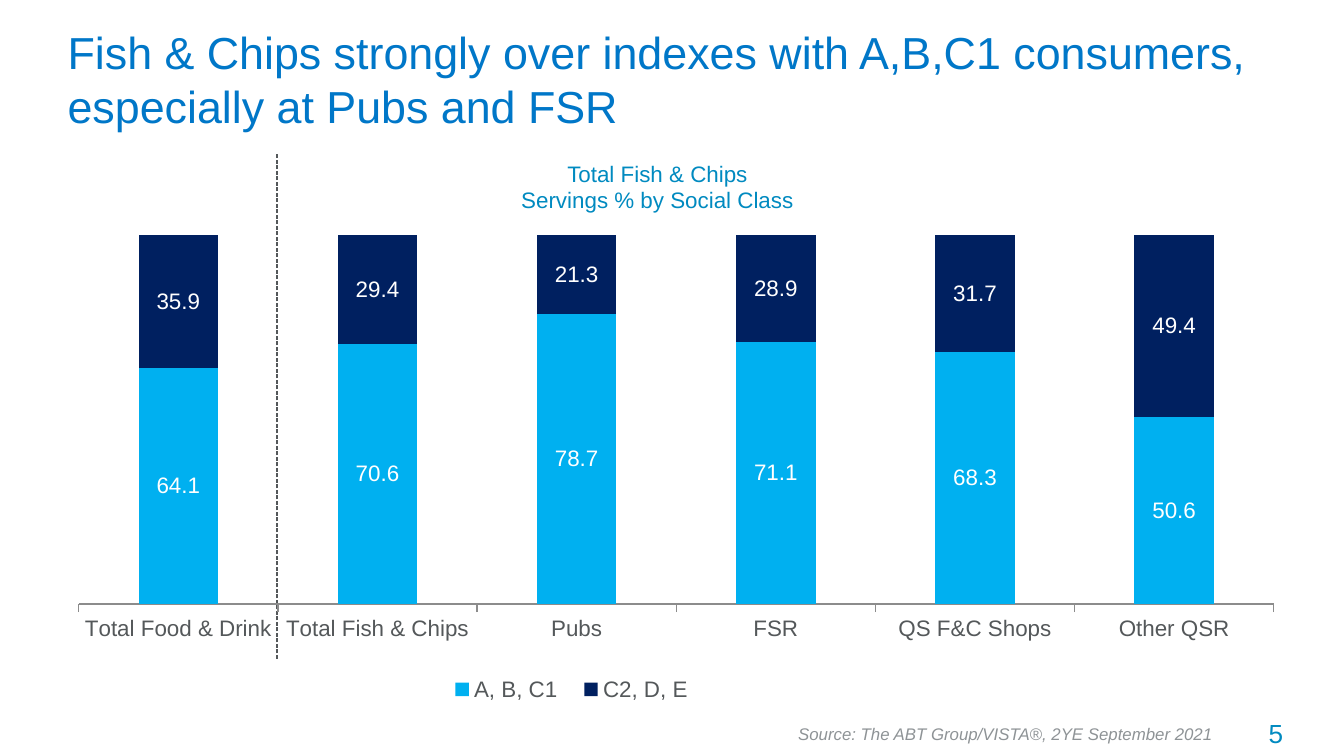
import pptx
import pptx.util
import pptx.chart.data
import pptx.dml.color
import pptx.enum.chart
import pptx.enum.dml
import pptx.enum.shapes
import pptx.enum.text
import pptx.oxml
import pptx.oxml.ns

RGB = pptx.dml.color.RGBColor
TITLE = RGB(0x00, 0x77, 0xC8)
TEAL = RGB(0x00, 0x8A, 0xC0)
GREY = RGB(0x54, 0x58, 0x5A)
PALE = RGB(0x8E, 0x93, 0x96)
AXIS = RGB(0x8C, 0x8C, 0x8C)
SKY = RGB(0x00, 0xB0, 0xF0)
NAVY = RGB(0x00, 0x20, 0x60)
WHITE = RGB(0xFF, 0xFF, 0xFF)
FONT = "Arial"
SCALE = 6350
ALIGN = pptx.enum.text.PP_ALIGN

CATS = ["Total Food & Drink", "Total Fish & Chips", "Pubs", "FSR",
        "QS F&C Shops", "Other QSR"]
SERIES = [
    ("A, B, C1", SKY, [64.1, 70.6, 78.7, 71.1, 68.3, 50.6]),
    ("C2, D, E", NAVY, [35.9, 29.4, 21.3, 28.9, 31.7, 49.4]),
]


def px(*nums):
    """Turn px lengths into EMU."""
    return [pptx.util.Emu(n * SCALE) for n in nums]


def style(font, size, color):
    """Set the face, size and colour of a font."""
    font.name = FONT
    font.size = pptx.util.Pt(size)
    font.color.rgb = color


def write(frame, lines, size, color, align, italic=False):
    """Fill a text frame with one run for each line."""
    for i, line in enumerate(lines):
        para = frame.add_paragraph() if i else frame.paragraphs[0]
        para.alignment = align
        run = para.add_run()
        run.text = line
        style(run.font, size, color)
        run.font.italic = italic


def add_title(slide, box, text):
    """Place and format the title."""
    title = slide.shapes.title
    title.left, title.top, title.width, title.height = px(*box)
    frame = title.text_frame
    frame.word_wrap = True
    frame.auto_size = pptx.enum.text.MSO_AUTO_SIZE.NONE
    frame.vertical_anchor = pptx.enum.text.MSO_ANCHOR.MIDDLE
    write(frame, [text], 24, TITLE, ALIGN.LEFT)


def add_text(slide, box, lines, size, color, align, wrap=False, italic=False):
    """Add a text box."""
    frame = slide.shapes.add_textbox(*px(*box)).text_frame
    frame.word_wrap = wrap
    frame.auto_size = pptx.enum.text.MSO_AUTO_SIZE.SHAPE_TO_FIT_TEXT
    write(frame, lines, size, color, align, italic)


def add_rule(slide, x, top, end):
    """Add the dashed upright divider."""
    kind = pptx.enum.shapes.MSO_CONNECTOR.STRAIGHT
    rule = slide.shapes.add_connector(kind, *px(x, end, x, top))
    rule.line.color.rgb = GREY
    rule.line.width = pptx.util.Pt(0.75)
    rule.line.dash_style = pptx.enum.dml.MSO_LINE.SQUARE_DOT
    props = rule._element.spPr
    props.append(props.makeelement(pptx.oxml.ns.qn("a:effectLst"), {}))


def make_layout(x, y, w, h, inner=False):
    """Build a manual chart layout from shares of the chart area."""
    parts = [("layoutTarget", "inner")] if inner else []
    parts += [("xMode", "edge"), ("yMode", "edge"),
              ("x", x), ("y", y), ("w", w), ("h", h)]
    body = "".join(f'<c:{tag} val="{val}"/>' for tag, val in parts)
    space = pptx.oxml.ns.nsdecls("c")
    return pptx.oxml.parse_xml(
        f"<c:layout {space}><c:manualLayout>{body}</c:manualLayout></c:layout>")


def set_layout(node, layout, index):
    """Replace the layout of a chart part."""
    for old in node.findall(pptx.oxml.ns.qn("c:layout")):
        node.remove(old)
    node.insert(index, layout)


def add_chart(slide, box):
    """Add the stacked column chart."""
    data = pptx.chart.data.CategoryChartData(number_format="#,##0.0")
    data.categories = CATS
    for name, _, vals in SERIES:
        data.add_series(name, vals)
    enum = pptx.enum.chart
    kind = enum.XL_CHART_TYPE.COLUMN_STACKED_100
    chart = slide.shapes.add_chart(kind, *px(*box), data).chart
    style(chart.font, 12, GREY)
    chart.has_title = False

    plot = chart.plots[0]
    plot.gap_width = 150
    plot.overlap = 100
    plot.vary_by_categories = False
    for series, (_, color, _) in zip(plot.series, SERIES):
        series.format.fill.solid()
        series.format.fill.fore_color.rgb = color
        labels = series.data_labels
        labels.show_value = True
        labels.number_format = "#,##0.0"
        labels.number_format_is_linked = False
        style(labels.font, 12, WHITE)

    chart.value_axis.visible = False
    chart.value_axis.has_major_gridlines = False
    axis = chart.category_axis
    axis.major_tick_mark = enum.XL_TICK_MARK.OUTSIDE
    axis.format.line.color.rgb = AXIS
    axis.format.line.width = pptx.util.Pt(0.75)

    chart.has_legend = True
    legend = chart.legend
    legend.position = enum.XL_LEGEND_POSITION.BOTTOM
    legend.include_in_layout = False
    set_layout(legend._element, make_layout(0.31, 0.92, 0.22, 0.08), 1)
    area = chart._chartSpace.chart.plotArea
    set_layout(area, make_layout(0.02, 0, 0.97, 0.78, True), 0)


def main():
    """Build and save the slide."""
    deck = pptx.Presentation()
    deck.slide_width, deck.slide_height = px(1440, 810)
    slide = deck.slides.add_slide(deck.slide_layouts[5])
    add_text(slide, (543, 164, 323, 73),
             ["Total Fish & Chips", "Servings % by Social Class"],
             12, TEAL, ALIGN.CENTER)
    add_rule(slide, 297, 164, 706)
    add_text(slide, (1274, 762, 115, 49), ["5"], 14, TEAL, ALIGN.RIGHT, wrap=True)
    add_title(slide, (58, 33, 1320, 102),
              "Fish & Chips strongly over indexes with A,B,C1 consumers, "
              "especially at Pubs and FSR")
    add_text(slide, (841, 768, 491, 36),
             ["Source: The ABT Group/VISTA®, 2YE September 2021"],
             9, PALE, ALIGN.LEFT, italic=True)
    add_chart(slide, (58, 252, 1320, 507))
    deck.save("out.pptx")


if __name__ == "__main__":
    main()
